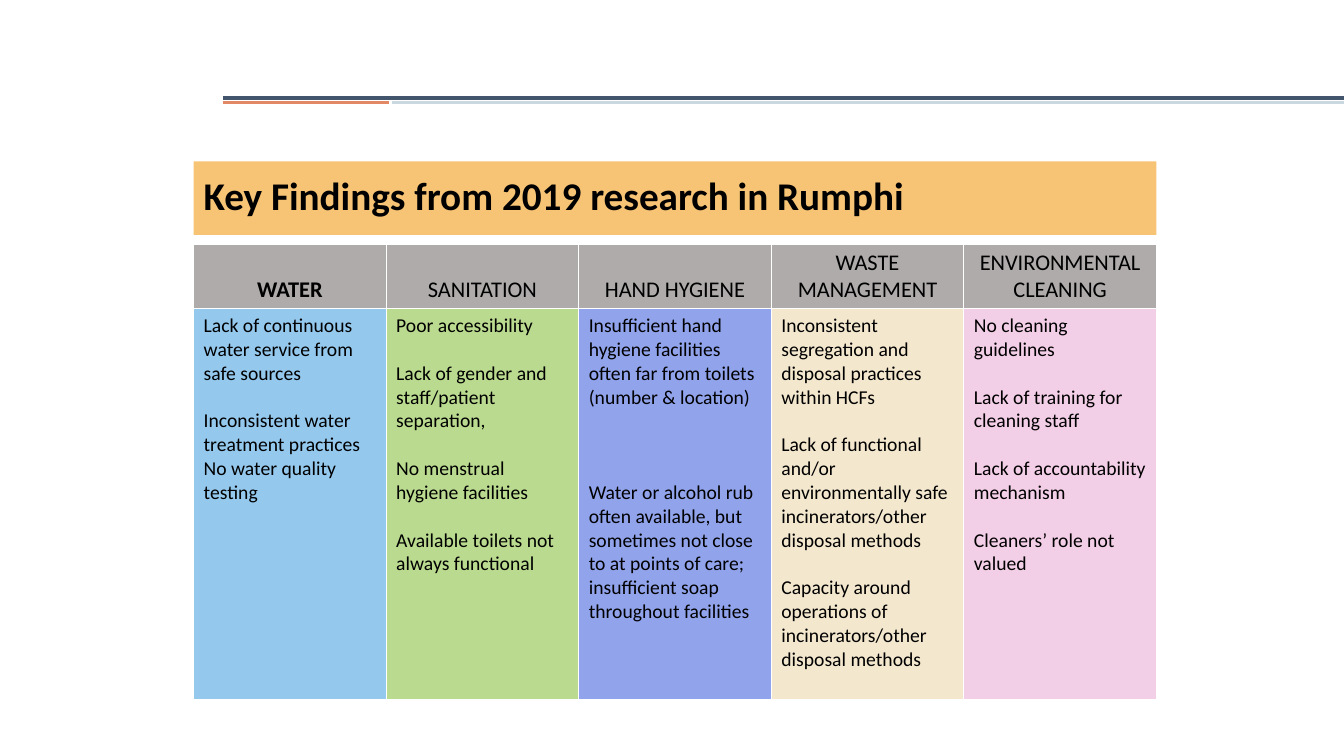
from lxml import etree
from pptx import Presentation
from pptx.dml.color import RGBColor
from pptx.enum.shapes import MSO_CONNECTOR
from pptx.enum.text import MSO_ANCHOR, MSO_AUTO_SIZE, PP_ALIGN
from pptx.oxml.ns import qn
from pptx.util import Inches, Pt

STRAIGHT = MSO_CONNECTOR.STRAIGHT
TOP, MIDDLE, BOTTOM = MSO_ANCHOR.TOP, MSO_ANCHOR.MIDDLE, MSO_ANCHOR.BOTTOM
LEFT, CENTER = PP_ALIGN.LEFT, PP_ALIGN.CENTER
NO_AUTOFIT = MSO_AUTO_SIZE.NONE

FONT = "Calibri"
SLIDE_WIDTH, SLIDE_HEIGHT = 13.33, 7.5
TABLE_LEFT, TABLE_WIDTH = 1.92, 9.55
HEADER_HEIGHT, BODY_HEIGHT = 0.64, 3.88
HEADER_FILL = "AFABAB"
GAP = 17  # points, one line of body text

# Each topic: heading, fill, findings as (text, space before in points)
TOPICS = [
    ("WATER", "94C8ED", [
        ("Lack of continuous water service from safe sources", 0),
        ("Inconsistent water treatment practices", GAP),
        ("No water quality testing", 0),
    ]),
    ("SANITATION", "B9DA8F", [
        ("Poor accessibility", 0),
        ("Lack of gender and staff/patient separation,", GAP),
        ("No menstrual hygiene facilities", GAP),
        ("Available toilets not always functional", GAP),
    ]),
    ("HAND HYGIENE", "90A3EB", [
        ("Insufficient hand hygiene facilities often far from toilets", 0),
        ("(number & location)", 0),
        ("Water or alcohol rub often available, but sometimes not close to "
         "at points of care; insufficient soap throughout facilities", 3 * GAP),
    ]),
    ("WASTE MANAGEMENT", "F3E7CE", [
        ("Inconsistent segregation and disposal practices within HCFs", 0),
        ("Lack of functional and/or environmentally safe incinerators/other "
         "disposal methods", GAP),
        ("Capacity around operations of incinerators/other disposal methods",
         GAP),
    ]),
    ("ENVIRONMENTAL CLEANING", "F3CEE7", [
        ("No cleaning guidelines", 0),
        ("Lack of training for cleaning staff", GAP),
        ("Lack of accountability mechanism", GAP),
        ("Cleaners’ role not valued", GAP),
    ]),
]


def color(value):
    return RGBColor.from_string(value)


def paint(fill, value):
    fill.solid()
    fill.fore_color.rgb = color(value)


def write(para, text, size=14, bold=False, align=LEFT, before=0, spacing=1.0):
    para.alignment = align
    para.space_before = Pt(before)
    para.line_spacing = spacing
    span = para.add_run()
    span.text = text
    span.font.name = FONT
    span.font.size = Pt(size)
    span.font.bold = bold
    span.font.color.rgb = color("000000")


def add_rule(slide, start, end, y, value, width):
    rule = slide.shapes.add_connector(
        STRAIGHT, Inches(start), Inches(y), Inches(end), Inches(y))
    rule.line.color.rgb = color(value)
    rule.line.width = Pt(width)
    etree.SubElement(rule._element.spPr, qn("a:effectLst"))


def format_title(title, text):
    title.left, title.top = Inches(TABLE_LEFT), Inches(1.6)
    title.width, title.height = Inches(TABLE_WIDTH), Inches(0.73)
    paint(title.fill, "F7C475")
    frame = title.text_frame
    frame.word_wrap = True
    frame.auto_size = NO_AUTOFIT
    frame.vertical_anchor = MIDDLE
    write(frame.paragraphs[0], text, size=28, bold=True, spacing=0.9)


def format_cell(cell, fill, anchor):
    properties = cell._tc.get_or_add_tcPr()
    for side in ("lnL", "lnR", "lnT", "lnB"):
        border = etree.SubElement(properties, qn(f"a:{side}"), w=str(Pt(1)))
        solid = etree.SubElement(border, qn("a:solidFill"))
        etree.SubElement(solid, qn("a:srgbClr"), val="FFFFFF")
    paint(cell.fill, fill)
    cell.vertical_anchor = anchor


def add_findings_table(slide):
    table = slide.shapes.add_table(
        2, len(TOPICS), Inches(TABLE_LEFT), Inches(2.42),
        Inches(TABLE_WIDTH), Inches(HEADER_HEIGHT + BODY_HEIGHT)).table
    table.rows[0].height = Inches(HEADER_HEIGHT)
    table.rows[1].height = Inches(BODY_HEIGHT)
    for column, (heading, fill, findings) in enumerate(TOPICS):
        table.columns[column].width = Inches(TABLE_WIDTH / len(TOPICS))
        header, body = table.cell(0, column), table.cell(1, column)
        format_cell(header, HEADER_FILL, BOTTOM)
        write(header.text_frame.paragraphs[0], heading, size=16,
              bold=column == 0, align=CENTER)
        format_cell(body, fill, TOP)
        frame = body.text_frame
        for index, (text, before) in enumerate(findings):
            para = frame.add_paragraph() if index else frame.paragraphs[0]
            write(para, text, before=before)


def main():
    deck = Presentation()
    deck.slide_width = Inches(SLIDE_WIDTH)
    deck.slide_height = Inches(SLIDE_HEIGHT)
    slide = deck.slides.add_slide(deck.slide_layouts[5])

    # Decorative rules
    add_rule(slide, 2.21, SLIDE_WIDTH, 0.97, "42556C", 3)
    add_rule(slide, 3.89, SLIDE_WIDTH, 1.02, "CCD8E0", 2.25)
    add_rule(slide, 2.21, 3.86, 1.02, "E38864", 2.25)

    # Title band and findings
    format_title(slide.shapes.title, "Key Findings from 2019 research in Rumphi")
    add_findings_table(slide)

    deck.save("out.pptx")


if __name__ == "__main__":
    main()
